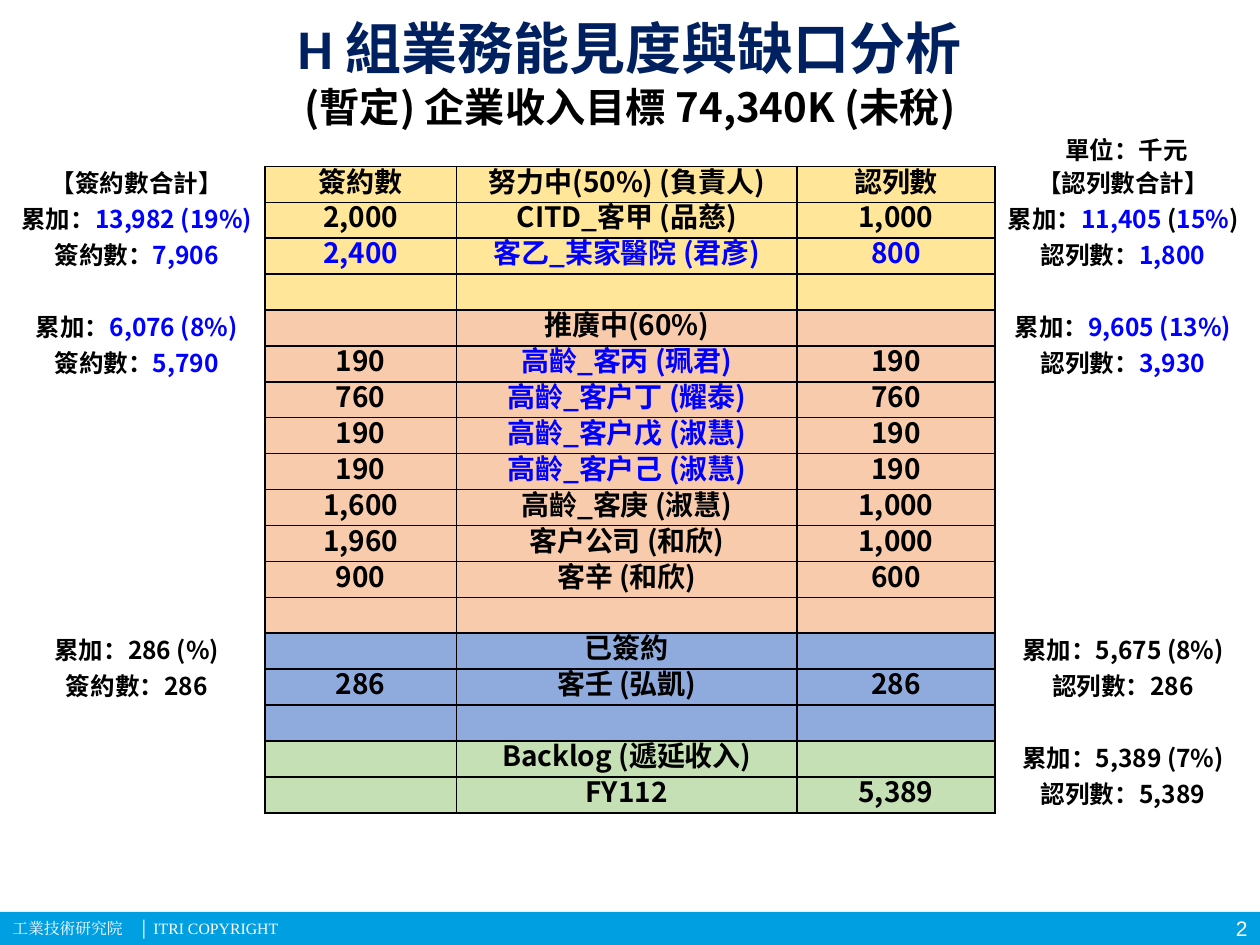
from dataclasses import dataclass

from lxml import etree
from pptx import Presentation
from pptx.dml.color import RGBColor
from pptx.enum.shapes import MSO_SHAPE
from pptx.enum.text import MSO_ANCHOR, PP_ALIGN
from pptx.oxml.ns import qn
from pptx.util import Emu, Inches, Pt

RECT = MSO_SHAPE.RECTANGLE
MIDDLE = MSO_ANCHOR.MIDDLE
LEFT, CENTER, RIGHT = PP_ALIGN.LEFT, PP_ALIGN.CENTER, PP_ALIGN.RIGHT


@dataclass(frozen=True)
class Theme:
    navy: str = "002060"
    black: str = "000000"
    white: str = "FFFFFF"
    blue: str = "0000FF"
    bar: str = "009FE2"
    trying: str = "FFE699"
    promoting: str = "F8CBAD"
    signed: str = "8FAADC"
    backlog: str = "C5E0B4"
    title_pt: int = 32
    subtitle_pt: int = 23
    body_pt: int = 16
    side_pt: int = 14
    page_pt: int = 12
    footer_pt: int = 9
    line_pt: int = 18
    body_font: str = "Noto Sans CJK TC"
    unit_font: str = "Noto Sans CJK SC"
    title_font: str = "Calibri"
    footer_font: str = "Times New Roman"
    page_font: str = "Arial"


T = Theme()
COLUMNS = (2.03, 1.52, 2.7, 1.57, 2.03)
SECTIONS = (
    (T.trying, (
        ("【簽約數合計】", "簽約數", "努力中(50%) (負責人)", "認列數", "【認列數合計】"),
        ("累加：|13,982 (19%)", "2,000", "CITD_客甲 (品慈)", "1,000",
         "累加：|11,405| (|15%|)"),
        ("簽約數：|7,906", "|2,400", "|客乙_某家醫院 (君彥)", "|800", "認列數：|1,800"),
        ("", "", "", "", ""),
    )),
    (T.promoting, (
        ("累加：|6,076 (8%)", "", "推廣中(60%)", "", "累加：|9,605 (13%)"),
        ("簽約數：|5,790", "190", "|高齡_客丙 (珮君)", "190", "認列數：|3,930"),
        ("", "760", "|高齡_客戶丁 (耀泰)", "760", ""),
        ("", "190", "|高齡_客戶戊 (淑慧)", "190", ""),
        ("", "190", "|高齡_客戶己 (淑慧)", "190", ""),
        ("", "1,600", "高齡_客庚 (淑慧)", "1,000", ""),
        ("", "1,960", "客戶公司 (和欣)", "1,000", ""),
        ("", "900", "客辛 (和欣)", "600", ""),
        ("", "", "", "", ""),
    )),
    (T.signed, (
        ("累加：286 (%)", "", "已簽約", "", "累加：5,675 (8%)"),
        ("簽約數：286", "286", "客壬 (弘凱)", "286", "認列數：286"),
        ("", "", "", "", ""),
    )),
    (T.backlog, (
        ("", "", "Backlog (遞延收入)", "", "累加：5,389 (7%)"),
        ("", "", "FY112", "5,389", "認列數：5,389"),
    )),
)


def within(box, left, top, width, height):
    x, y, w, h = box
    return (Emu(int(x + w * left)), Emu(int(y + h * top)),
            Emu(int(w * width)), Emu(int(h * height)))


def add_run(p, text, size, font, color, bold=True):
    r = p.add_run()
    r.text = text
    r.font.size, r.font.name, r.font.bold = Pt(size), font, bold
    r.font.color.rgb = RGBColor.from_string(color)
    etree.SubElement(r.font._element, qn("a:ea"), typeface=font)


def add_text(s, box, text, size, font, color, align=CENTER, bold=True):
    tf = s.shapes.add_textbox(*box).text_frame
    tf.word_wrap = True
    tf.vertical_anchor = MIDDLE
    p = tf.paragraphs[0]
    p.alignment = align
    add_run(p, text, size, font, color, bold)
    return p


def add_heading(s, box):
    add_text(s, within(box, 0, 0, 1, 0.46), "H 組業務能見度與缺口分析",
             T.title_pt, T.title_font, T.navy)
    add_text(s, within(box, 0, 0.41, 1, 0.38), "(暫定) 企業收入目標 74,340K (未稅)",
             T.subtitle_pt, T.body_font, T.black)
    add_text(s, within(box, 0.87, 0.73, 0.13, 0.27), "單位：千元",
             T.side_pt, T.unit_font, T.black)


def set_borders(cell, sides):
    tcPr = cell._tc.get_or_add_tcPr()
    for i, side in enumerate("LRTB"):
        ln = etree.Element(qn(f"a:ln{side}"), w=str(Pt(1)))
        if side in sides:
            fill = etree.SubElement(ln, qn("a:solidFill"))
            etree.SubElement(fill, qn("a:srgbClr"), val=T.black)
        else:
            etree.SubElement(ln, qn("a:noFill"))
        tcPr.insert(i, ln)


def fill_cell(cell, text, size, color, sides):
    cell.fill.solid()
    cell.fill.fore_color.rgb = RGBColor.from_string(color)
    cell.vertical_anchor = MIDDLE
    cell.margin_left = cell.margin_right = Inches(0.02)
    cell.margin_top = cell.margin_bottom = 0
    set_borders(cell, sides)
    p = cell.text_frame.paragraphs[0]
    p.alignment = CENTER
    p.line_spacing = Pt(T.line_pt)
    for i, part in enumerate(text.split("|")):
        if part:
            add_run(p, part, size, T.body_font, T.blue if i % 2 else T.black)
    if not text:
        etree.SubElement(p._p, qn("a:endParaRPr"), sz=str(size * 100))


def add_pipeline(s, box):
    rows = [(color, row) for color, section in SECTIONS for row in section]
    table = s.shapes.add_table(len(rows), len(COLUMNS), *box).table
    table.first_row = table.horz_banding = False
    for col, share in zip(table.columns, COLUMNS):
        col.width = Emu(int(box[2] * share / sum(COLUMNS)))
    last = len(COLUMNS) - 1
    outer_sides = {0: "R", last: "L"}
    for i, (color, row) in enumerate(rows):
        table.rows[i].height = Emu(int(box[3] / len(rows)))
        for j, text in enumerate(row):
            outer = j in outer_sides
            fill_cell(table.cell(i, j), text, T.side_pt if outer else T.body_pt,
                      T.white if outer else color, outer_sides.get(j, "LRTB"))


def add_footer(s, box):
    sp = s.shapes.add_shape(RECT, *box)
    sp.shadow.inherit = False
    sp.fill.solid()
    sp.fill.fore_color.rgb = RGBColor.from_string(T.bar)
    sp.line.fill.background()
    add_text(s, within(box, 0.942, 0, 0.058, 1), "2", T.page_pt, T.page_font,
             T.white, RIGHT, False)
    p = add_text(s, within(box, 0, 0, 0.894, 1), "工業技術研究院\t│ ITRI COPYRIGHT",
                 T.footer_pt, T.footer_font, T.white, LEFT, False)
    tabs = etree.SubElement(p._p.get_or_add_pPr(), qn("a:tabLst"))
    etree.SubElement(tabs, qn("a:tab"), pos=str(Inches(1)), algn="l")


def main():
    prs = Presentation()
    prs.slide_width, prs.slide_height = Inches(10), Inches(7.5)
    s = prs.slides.add_slide(prs.slide_layouts[6])
    page = (0, 0, prs.slide_width, prs.slide_height)
    add_footer(s, within(page, 0, 0.965, 1, 0.035))
    add_heading(s, within(page, 0.047, 0.01, 0.906, 0.171))
    add_pipeline(s, within(page, 0.007, 0.176, 0.986, 0.685))
    prs.save("out.pptx")


if __name__ == "__main__":
    main()
